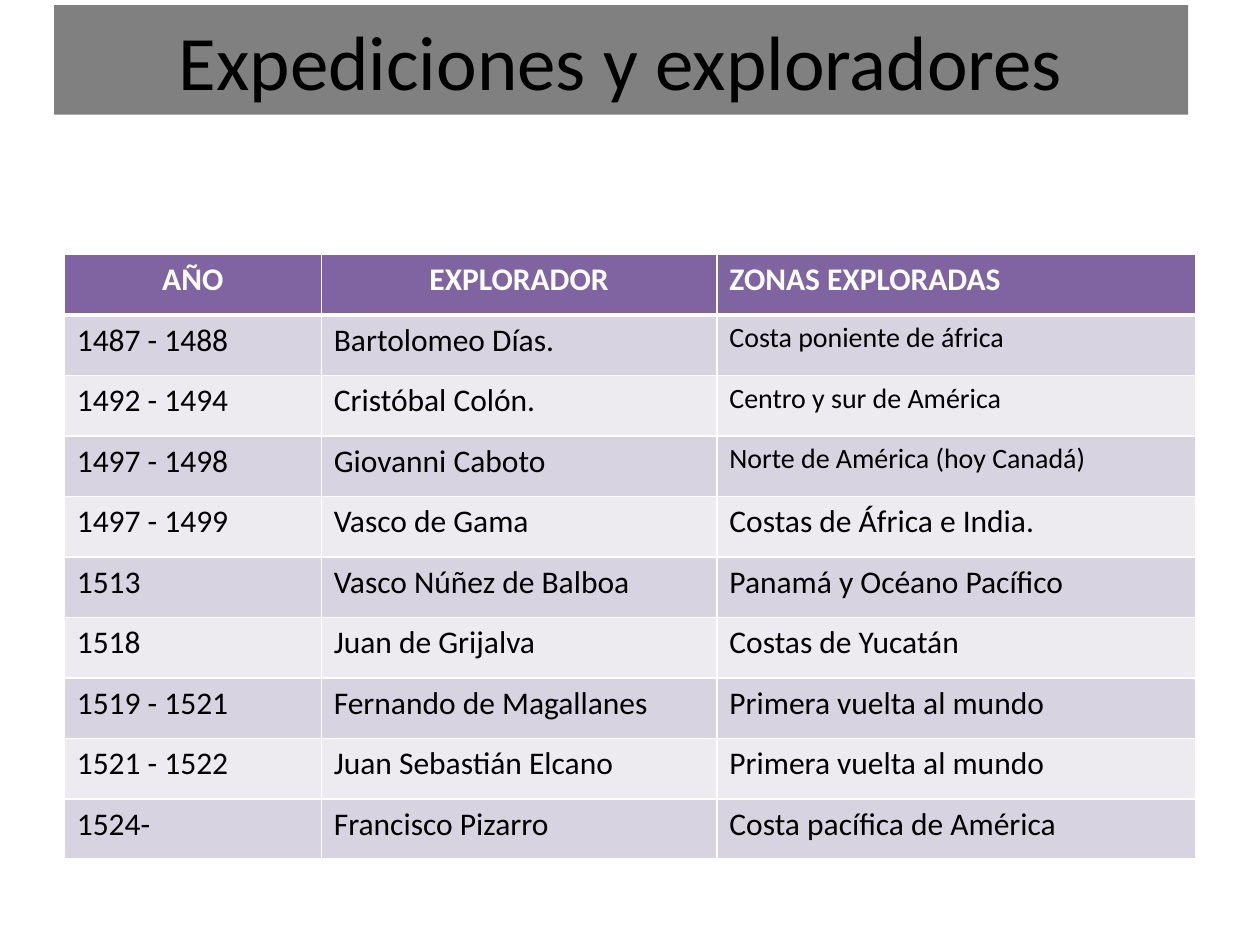
"""Build a slide that lists expeditions and their explorers."""
from dataclasses import dataclass

from lxml import etree
from pptx import Presentation
from pptx import util as u
from pptx.dml.color import RGBColor
from pptx.enum import text
from pptx.oxml.ns import qn


@dataclass(frozen=True)
class Theme:
    """Colours, font and type sizes of the slide."""
    font: str = "Calibri"
    ink: str = "000000"
    paper: str = "FFFFFF"
    banner: str = "808080"
    header: str = "8064A2"
    bands: tuple = ("D8D3E0", "EDEAF0")
    title_size: int = 44
    cell_size: int = 18
    small_size: int = 16
    rule: int = 1
    header_rule: int = 3


THEME = Theme()
TITLE = "Expediciones y exploradores"
TITLE_BOX = (0.43, 0.04, 9, 0.87)
TABLE_BOX = (0.51, 2.02, 8.98, 4.8)
COLUMN_WIDTHS = (2.04, 3.14, 3.8)
HEADINGS = ("AÑO", "EXPLORADOR", "ZONAS EXPLORADAS")
EXPEDITIONS = (
    ("1487 - 1488", "Bartolomeo Días.", "Costa poniente de áfrica"),
    ("1492 - 1494", "Cristóbal Colón.", "Centro y sur de América"),
    ("1497 - 1498", "Giovanni Caboto", "Norte de América (hoy Canadá)"),
    ("1497 - 1499", "Vasco de Gama", "Costas de África e India."),
    ("1513", "Vasco Núñez de Balboa", "Panamá y Océano Pacífico"),
    ("1518", "Juan de Grijalva", "Costas de Yucatán"),
    ("1519 - 1521", "Fernando de Magallanes", "Primera vuelta al mundo"),
    ("1521 - 1522", "Juan Sebastián Elcano", "Primera vuelta al mundo"),
    ("1524-", "Francisco Pizarro", "Costa pacífica de América"),
)
SMALL_ZONES = range(1, 4)


def write(frame, words, size, color, bold=False, centered=False):
    """Add one formatted run to the first paragraph of a text frame."""
    paragraph = frame.paragraphs[0]
    paragraph.alignment = text.PP_ALIGN.CENTER if centered else text.PP_ALIGN.LEFT
    run = paragraph.add_run()
    run.text = words
    run.font.name = THEME.font
    run.font.size = u.Pt(size)
    run.font.bold = bold
    run.font.color.rgb = RGBColor.from_string(color)


def paint(fill, color):
    """Give a fill one solid colour."""
    fill.solid()
    fill.fore_color.rgb = RGBColor.from_string(color)


def rule_cell(cell, top, bottom):
    """Draw the four borders of a cell with widths in points."""
    properties = cell._tc.get_or_add_tcPr()
    widths = {"L": THEME.rule, "R": THEME.rule, "T": top, "B": bottom}
    for side, width in widths.items():
        line = etree.SubElement(properties, qn(f"a:ln{side}"), w=str(u.Pt(width)))
        solid = etree.SubElement(line, qn("a:solidFill"))
        etree.SubElement(solid, qn("a:srgbClr"), val=THEME.paper)


def add_title(slide, box):
    """Place the title banner in its box."""
    title = slide.shapes.title
    title.left, title.top, title.width, title.height = map(u.Inches, box)
    paint(title.fill, THEME.banner)
    title.text_frame.vertical_anchor = text.MSO_ANCHOR.MIDDLE
    write(title.text_frame, TITLE, THEME.title_size, THEME.ink, centered=True)


def add_expeditions(slide, box):
    """Place the table of expeditions in its box with equal rows."""
    rows = (HEADINGS, *EXPEDITIONS)
    frame = slide.shapes.add_table(len(rows), len(HEADINGS), *map(u.Inches, box))
    table = frame.table
    for column, width in zip(table.columns, COLUMN_WIDTHS):
        column.width = u.Inches(width)
    for r, row in enumerate(rows):
        heading = r == 0
        top = THEME.header_rule if r == 1 else THEME.rule
        bottom = THEME.header_rule if heading else THEME.rule
        for c, words in enumerate(row):
            cell = table.cell(r, c)
            last = c == len(HEADINGS) - 1
            small = last and r in SMALL_ZONES
            rule_cell(cell, top, bottom)
            paint(cell.fill, THEME.header if heading else THEME.bands[(r - 1) % 2])
            write(cell.text_frame, words,
                  THEME.small_size if small else THEME.cell_size,
                  THEME.paper if heading else THEME.ink,
                  bold=heading, centered=heading and not last)


def main():
    """Build and save the presentation."""
    deck = Presentation()
    deck.slide_width, deck.slide_height = u.Inches(10), u.Inches(7.5)
    slide = deck.slides.add_slide(deck.slide_layouts.get_by_name("Title Only"))
    paint(slide.background.fill, THEME.paper)
    add_title(slide, TITLE_BOX)
    add_expeditions(slide, TABLE_BOX)
    deck.save("out.pptx")


if __name__ == "__main__":
    main()
